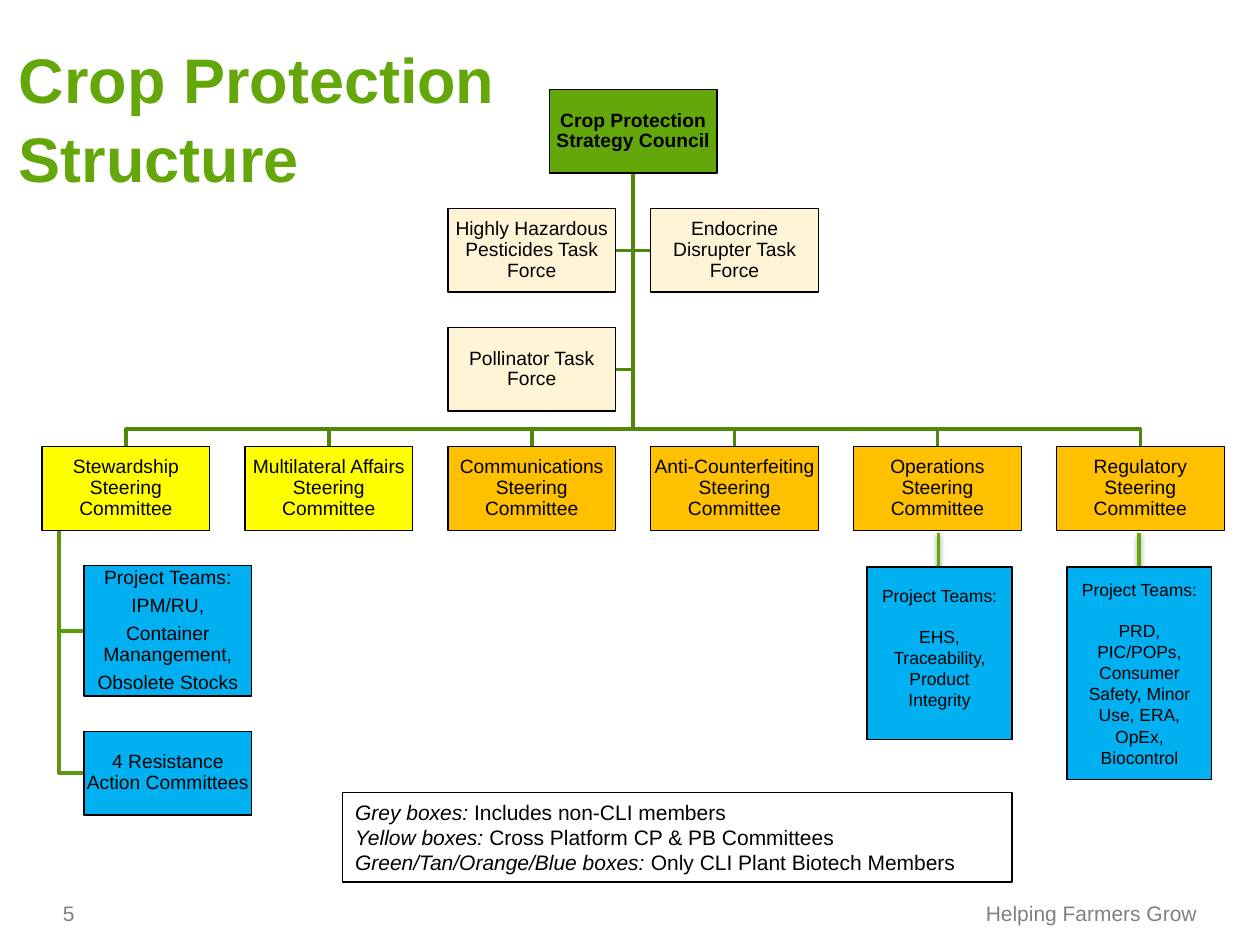
import pptx
import pptx.dml.color
import pptx.enum.shapes
import pptx.enum.text
import pptx.oxml
import pptx.oxml.ns
import pptx.util
from pptx.util import Cm

ALIGN = pptx.enum.text.PP_ALIGN
ANCHOR = pptx.enum.text.MSO_ANCHOR
RECTANGLE = pptx.enum.shapes.MSO_SHAPE.RECTANGLE


def paint(color_format_owner, color):
    """Give a font, or a fill that is solid, its colour."""
    target = getattr(color_format_owner, "fore_color", None) or color_format_owner.color
    target.rgb = pptx.dml.color.RGBColor.from_string(color)


def write(frame, paragraphs, size, color="000000", align=ALIGN.LEFT, margins=(0, 0, 0, 0),
          anchor=ANCHOR.TOP, bold=False):
    """Fill a text frame; each paragraph is a list of (text, italic) runs."""
    frame.word_wrap = True
    frame.vertical_anchor = anchor
    frame.margin_left, frame.margin_top, frame.margin_right, frame.margin_bottom = map(Cm, margins)
    for index, runs in enumerate(paragraphs):
        paragraph = frame.paragraphs[0] if index == 0 else frame.add_paragraph()
        paragraph.alignment = align
        for text, italic in runs:
            run = paragraph.add_run()
            run.text = text
            run.font.name = "Arial"
            run.font.size = pptx.util.Pt(size)
            run.font.bold = bold
            run.font.italic = italic
            paint(run.font, color)


presentation = pptx.Presentation()
presentation.slide_width = Cm(25.4)
presentation.slide_height = Cm(19.05)
slide = presentation.slides.add_slide(presentation.slide_layouts[5])
shapes = slide.shapes

# Title
title = shapes.title
title.left, title.top, title.width, title.height = Cm(0.38), Cm(0.66), Cm(15.88), Cm(1.55)
title.text_frame.auto_size = pptx.enum.text.MSO_AUTO_SIZE.NONE
write(title.text_frame, [[("Crop Protection ", False)]], 36, "64A70B", margins=(0, 0.1, 0, 0), bold=True)
title_paragraph = title.text_frame.paragraphs[0]
title_paragraph.line_spacing = 1.04
title_paragraph.add_line_break()
second_line = title_paragraph.add_run()
second_line.text = "Structure"
second_line.font.name = "Arial"
second_line.font.size = pptx.util.Pt(36)
second_line.font.bold = True
paint(second_line.font, "64A70B")

# Footer
for left, width, text, align in [
    (19.74, 4.39, "Helping Farmers Grow", ALIGN.RIGHT),
    (1.27, 2.97, "5", ALIGN.LEFT),
]:
    footer = shapes.add_textbox(Cm(left), Cm(18.14), Cm(width), Cm(0.53))
    write(footer.text_frame, [[(text, False)]], 12, "808080", align, anchor=ANCHOR.BOTTOM)

# Legend
legend = shapes.add_shape(RECTANGLE, Cm(6.91), Cm(15.98), Cm(13.49), Cm(1.8))
legend.shadow.inherit = False
legend.fill.background()
legend.line.width = pptx.util.Pt(0.75)
paint(legend.line, "000000")
write(legend.text_frame, [
    [("Grey boxes: ", True), ("Includes non-CLI members", False)],
    [("Yellow boxes: ", True), ("Cross Platform CP & PB Committees", False)],
    [("Green/Tan/Orange/Blue boxes: ", True), ("Only CLI Plant Biotech Members", False)],
], 12, margins=(0.25, 0.13, 0.25, 0.13))

# Grid of the chart
box_width, box_height, gap = 3.38, 1.69, 0.71
columns = [0.85 + 4.09 * column for column in range(6)]
rows = [1.8 + 2.4 * row for row in range(5)]
trunk = (columns[0] + columns[5] + box_width) / 2
bus = rows[3] - gap / 2
team_height = 2.63
team_left = columns[0] + box_width / 4
resistance_top = rows[4] + team_height + gap
drop = columns[0] + box_width / 10

# Branches
start = (trunk, rows[0] + box_height)
branches = []
for row, end in [(2, columns[2] + box_width), (1, columns[3]), (1, columns[2] + box_width)]:
    middle = rows[row] + box_height / 2
    branches.append(("508609", [start, (trunk, middle), (end, middle)]))
for column in columns:
    center = column + box_width / 2
    branches.append(("508609", [start, (trunk, bus), (center, bus), (center, rows[3])]))
for middle in (resistance_top + box_height / 2, rows[4] + team_height / 2):
    branches.append(("5B980A", [(drop, rows[3] + box_height), (drop, middle), (team_left, middle)]))
for color, points in branches:
    corners = [(Cm(x), Cm(y)) for x, y in points]
    builder = shapes.build_freeform(*corners[0])
    builder.add_line_segments(corners[1:], close=False)
    branch = builder.convert_to_shape()
    branch.shadow.inherit = False
    branch.fill.background()
    branch.line.width = pptx.util.Pt(2)
    paint(branch.line, color)

# Links to the project teams on the right
for x, bottom in [(22.96, 13.74), (18.92, 13.69)]:
    link = shapes.add_connector(pptx.enum.shapes.MSO_CONNECTOR.STRAIGHT, Cm(x), Cm(10.74), Cm(x), Cm(bottom))
    link.line.width = pptx.util.Pt(2)
    paint(link.line, "64A70B")
    link._element.spPr.append(pptx.oxml.parse_xml(
        f'<a:effectLst {pptx.oxml.ns.nsdecls("a")}>'
        '<a:outerShdw blurRad="39400" dist="20300" dir="5400000" rotWithShape="0">'
        '<a:srgbClr val="000000"><a:alpha val="38000"/></a:srgbClr></a:outerShdw></a:effectLst>'))

# Boxes of the chart: left, top, height, fill, paragraphs
GREEN, TAN, YELLOW, ORANGE, BLUE = "64A70B", "FFF4D5", "FFFF00", "FFC000", "00B0F0"
boxes = [
    (trunk - box_width / 2, rows[0], box_height, GREEN, ["Crop Protection Strategy Council"]),
    (columns[2], rows[1], box_height, TAN, ["Highly Hazardous Pesticides Task Force"]),
    (columns[3], rows[1], box_height, TAN, ["Endocrine Disrupter Task Force"]),
    (columns[2], rows[2], box_height, TAN, ["Pollinator Task Force"]),
    (team_left, rows[4], team_height, BLUE,
     ["Project Teams:", "IPM/RU,", "Container Manangement,", "Obsolete Stocks"]),
    (team_left, resistance_top, box_height, BLUE, ["4 Resistance Action Committees"]),
]
committees = [("Stewardship", YELLOW), ("Multilateral Affairs", YELLOW), ("Communications", ORANGE),
              ("Anti-Counterfeiting", ORANGE), ("Operations", ORANGE), ("Regulatory", ORANGE)]
for column, (name, fill) in zip(columns, committees):
    boxes.append((column, rows[3], box_height, fill, [f"{name} Steering Committee"]))
for left, top, height, fill, texts in boxes:
    box = shapes.add_shape(RECTANGLE, Cm(left), Cm(top), Cm(box_width), Cm(height))
    box.shadow.inherit = False
    box.fill.solid()
    paint(box.fill, fill)
    box.line.width = pptx.util.Pt(0.75)
    paint(box.line, "000000")
    write(box.text_frame, [[(text, False)] for text in texts], 11, align=ALIGN.CENTER,
          margins=(0.03, 0.03, 0.03, 0.03), anchor=ANCHOR.MIDDLE, bold=fill == GREEN)
    for paragraph in box.text_frame.paragraphs:
        paragraph.line_spacing = 0.9
        paragraph.space_after = pptx.util.Pt(4)

# Project teams on the right
for left, height, anchor, margin_top, texts in [
    (21.51, 4.29, ANCHOR.MIDDLE, 0.13,
     ["Project Teams:", "PRD, PIC/POPs, Consumer Safety, Minor Use, ERA, OpEx, Biocontrol"]),
    (17.48, 3.48, ANCHOR.TOP, 0.36, ["Project Teams:", "EHS, Traceability,", "Product Integrity"]),
]:
    team = shapes.add_shape(RECTANGLE, Cm(left), Cm(11.43), Cm(2.92), Cm(height))
    team.shadow.inherit = False
    team.fill.solid()
    paint(team.fill, BLUE)
    team.line.width = pptx.util.Pt(0.75)
    paint(team.line, "000000")
    write(team.text_frame, [[(text, False)] for text in texts], 10, align=ALIGN.CENTER,
          margins=(0.25, margin_top, 0.25, 0.13), anchor=anchor)
    team.text_frame.paragraphs[1].space_before = pptx.util.Pt(11.5)

presentation.save("out.pptx")
